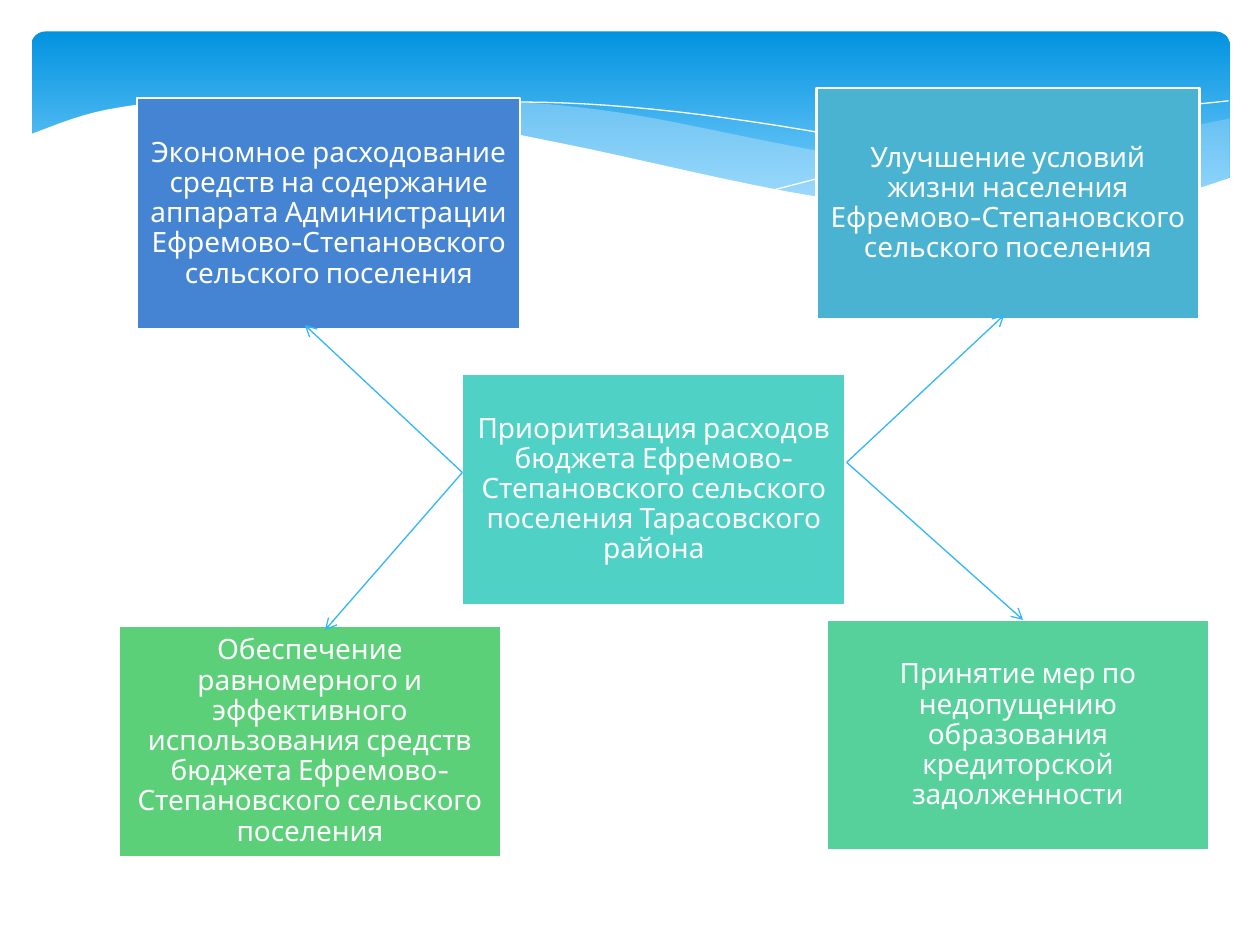
from dataclasses import dataclass

from lxml.etree import SubElement
from pptx import Presentation
from pptx.dml.color import RGBColor
from pptx.enum.shapes import MSO_CONNECTOR, MSO_SHAPE
from pptx.enum.text import MSO_ANCHOR, PP_ALIGN
from pptx.oxml.ns import qn
from pptx.util import Inches, Pt

Point = tuple[float, float]

HUES = {
    "top": "0293E0", "base": "83D3FE", "wave": "C6E7FC", "white": "FFFFFF",
    "blue": "4584D3", "sky": "4BB3D2", "teal": "50D1C5",
    "mint": "56D19C", "green": "5BD078", "arrow": "31B6FD",
}
WIDE, HIGH = 3.04, 1.83
STEPS = 8


@dataclass
class Wave:
    edges: list[list[Point]]  # each edge is a smooth curve through its knots
    fill: str = ""
    alpha: int = 100


@dataclass
class Card:
    left: float
    top: float
    hue: str
    text: str


@dataclass
class Arrow:
    start: Point
    end: Point


def color(name: str) -> RGBColor:
    return RGBColor.from_string(HUES[name])


def smooth(knots: list[Point]) -> list[Point]:
    """Sample a Catmull-Rom curve through the knots."""
    ext = [knots[0], *knots, knots[-1]]
    curve = [knots[0]]
    for a, b, c, d in zip(ext, ext[1:], ext[2:], ext[3:]):
        for step in range(1, STEPS + 1):
            t = step / STEPS
            curve.append(tuple(
                q + t / 2 * (r - p + t * (2 * p - 5 * q + 4 * r - s
                                          + t * (3 * (q - r) + s - p)))
                for p, q, r, s in zip(a, b, c, d)))
    return curve


def draw_band(slide) -> None:
    band = slide.shapes.add_shape(
        MSO_SHAPE.ROUNDED_RECTANGLE, Inches(0.25), Inches(0.25), Inches(9.51), Inches(1.56))
    band.adjustments[0] = 0.07
    band.shadow.inherit = False
    band.line.fill.background()
    band.fill.gradient()
    band.fill.gradient_angle = 270
    for stop, name, place in zip(band.fill.gradient_stops, ("top", "base"), (0, 0.9)):
        stop.color.rgb = color(name)
        stop.position = place


def draw_wave(slide, wave: Wave) -> None:
    first, *rest = [(Inches(x), Inches(y)) for edge in wave.edges
                    for x, y in (smooth(edge) if len(edge) > 2 else edge)]
    pen = slide.shapes.build_freeform(*first)
    pen.add_line_segments(rest, close=bool(wave.fill))
    shape = pen.convert_to_shape()
    shape.shadow.inherit = False
    if not wave.fill:
        shape.fill.background()
        shape.line.color.rgb = color("white")
        shape.line.width = Pt(0)
        return
    shape.line.fill.background()
    shape.fill.solid()
    shape.fill.fore_color.rgb = color(wave.fill)
    if wave.alpha < 100:
        tint = shape.element.spPr.find(qn("a:solidFill")).find(qn("a:srgbClr"))
        SubElement(tint, qn("a:alpha"), val=str(wave.alpha * 1000))


def draw_card(slide, card: Card) -> None:
    box = slide.shapes.add_shape(
        MSO_SHAPE.RECTANGLE, Inches(card.left), Inches(card.top), Inches(WIDE), Inches(HIGH))
    box.shadow.inherit = False
    box.fill.solid()
    box.fill.fore_color.rgb = color(card.hue)
    box.line.color.rgb = color("white")
    box.line.width = Pt(1.25)
    frame = box.text_frame
    frame.word_wrap = True
    frame.vertical_anchor = MSO_ANCHOR.MIDDLE
    frame.margin_left = frame.margin_right = Inches(0.07)
    frame.margin_top = frame.margin_bottom = Inches(0.07)
    para = frame.paragraphs[0]
    para.text = card.text
    para.alignment = PP_ALIGN.CENTER
    para.line_spacing = 0.9
    para.font.name = "Cabin"
    para.font.size = Pt(16)
    para.font.color.rgb = color("white")


def draw_arrow(slide, arrow: Arrow) -> None:
    ends = [Inches(n) for n in (*arrow.start, *arrow.end)]
    link = slide.shapes.add_connector(MSO_CONNECTOR.STRAIGHT, *ends)
    link.line.color.rgb = color("arrow")
    link.line.width = Pt(0.75)
    line = link.element.spPr.find(qn("a:ln"))
    SubElement(line, qn("a:tailEnd"), type="arrow")
    SubElement(link.element.spPr, qn("a:effectLst"))


WAVES = [
    # Right swell
    Wave([[(9.76, 0.94), (8.61, 1.18), (6.61, 1.6)],
          [(6.61, 1.6), (8.03, 1.72), (9.05, 1.63), (9.76, 1.41)]], "wave", 29),
    # Middle swell
    Wave([[(2.86, 0.86), (3.8, 0.8), (4.89, 0.89), (6.29, 1.16), (8.93, 1.67)],
          [(8.93, 1.67), (8.07, 1.73), (6.8, 1.63), (4.49, 1.16), (2.86, 0.86)]],
         "wave", 40),
    # Thin crests
    Wave([[(3.09, 0.9), (4.16, 0.81), (5.56, 0.91), (7.27, 1.2), (9.07, 1.66)]]),
    Wave([[(6.13, 1.51), (7.48, 1.17), (8.66, 0.93), (9.75, 0.8)]]),
    # White front
    Wave([[(9.77, 1.41), (8.99, 1.64), (8.09, 1.71), (6.48, 1.56), (4.47, 1.14),
           (2.92, 0.85), (1.77, 0.78), (0.85, 0.87), (0.23, 1.07)],
          [(0.23, 2.24), (9.77, 2.24)]], "white"),
]

CARDS = [
    Card(1.09, 0.78, "blue", "Экономное расходование средств на содержание аппарата "
         "Администрации Ефремово-Степановского сельского поселения"),
    Card(6.48, 0.7, "sky", "Улучшение условий жизни населения "
         "Ефремово-Степановского сельского поселения"),
    Card(3.67, 2.97, "teal", "Приоритизация расходов бюджета "
         "Ефремово-Степановского сельского поселения Тарасовского района"),
    Card(6.56, 4.92, "mint", "Принятие мер по недопущению образования "
         "кредиторской задолженности"),
    Card(0.94, 4.97, "green", "Обеспечение равномерного и эффективного использования "
         "средств бюджета Ефремово-Степановского сельского поселения"),
]

LEFT, RIGHT = (3.67, 3.75), (6.72, 3.67)
ARROWS = [
    Arrow(LEFT, (2.58, 5)), Arrow(LEFT, (2.42, 2.58)),
    Arrow(RIGHT, (7.97, 2.5)), Arrow(RIGHT, (8.12, 4.92)),
]


def main() -> None:
    deck = Presentation()
    deck.slide_width, deck.slide_height = Inches(10), Inches(7.5)
    slide = deck.slides.add_slide(deck.slide_layouts[6])

    # Header with waves
    draw_band(slide)
    for wave in WAVES:
        draw_wave(slide, wave)

    # Priorities around the centre
    for card in CARDS:
        draw_card(slide, card)
    for arrow in ARROWS:
        draw_arrow(slide, arrow)

    deck.save("out.pptx")


if __name__ == "__main__":
    main()
